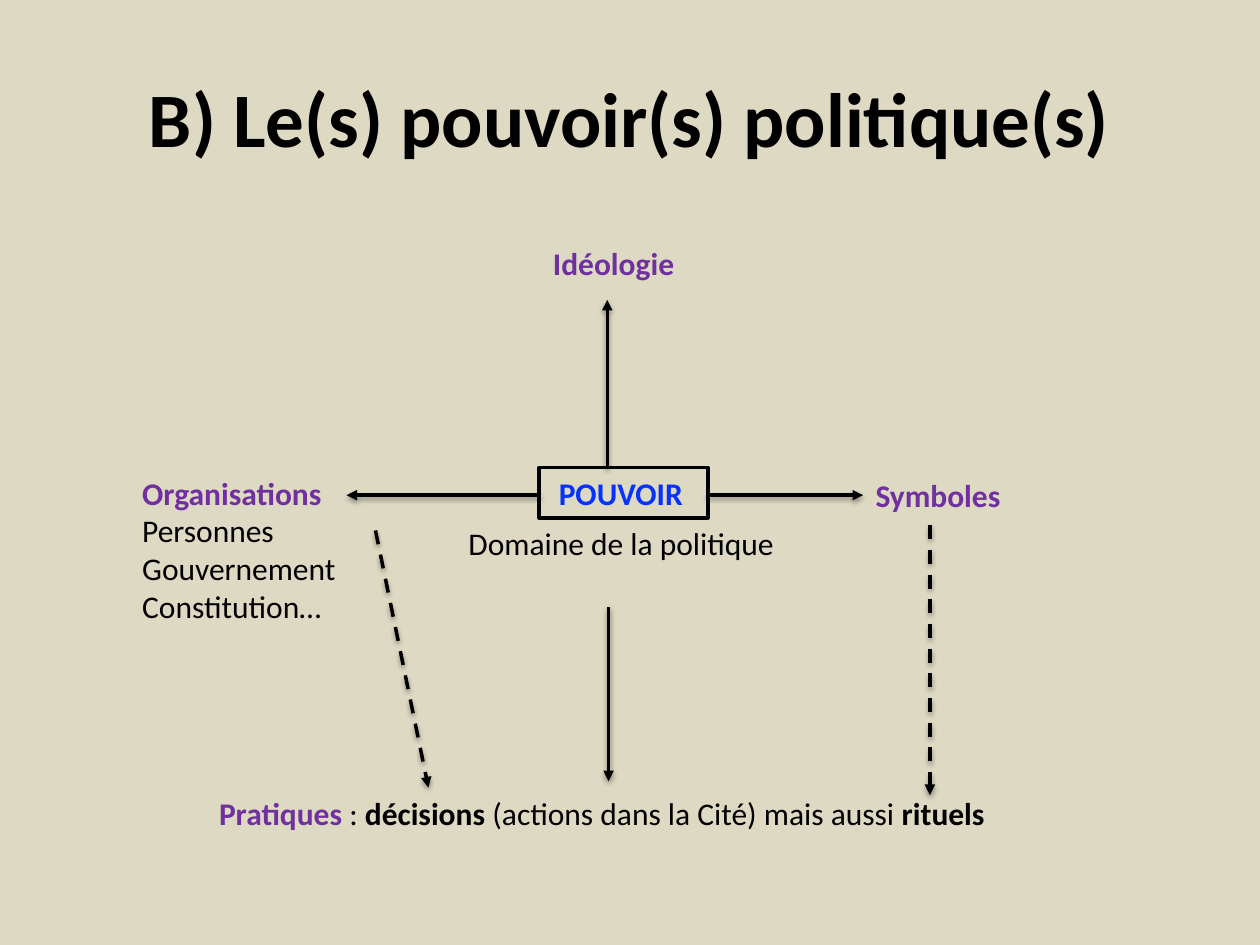
from pptx import Presentation
from pptx.dml.color import RGBColor
from pptx.enum.dml import MSO_LINE_DASH_STYLE as Dash
from pptx.enum.shapes import MSO_CONNECTOR as Connector, MSO_SHAPE as Shape
from pptx.enum.text import MSO_ANCHOR as Anchor, PP_ALIGN as Align
from pptx.oxml import parse_xml
from pptx.oxml.ns import nsdecls
from pptx.util import Inches, Pt

BEIGE = RGBColor(0xDD, 0xD9, 0xC3)
BLACK = RGBColor(0x00, 0x00, 0x00)
BLUE = RGBColor(0x04, 0x32, 0xFF)
PURPLE = RGBColor(0x70, 0x30, 0xA0)

WIDTH, HEIGHT = Inches(10), Inches(7.5)
COLUMNS, ROWS = 100, 75
FONT = "Calibri"
LINE_WIDTH = Pt(2)
LABEL_HEIGHT = 4

SHADOW = (
    f'<a:effectLst {nsdecls("a")}>'
    '<a:outerShdw blurRad="39370" dist="20320" dir="5400000" rotWithShape="0">'
    '<a:srgbClr val="000000"><a:alpha val="38000"/></a:srgbClr>'
    '</a:outerShdw></a:effectLst>'
)
ARROWHEAD = f'<a:tailEnd {nsdecls("a")} type="triangle"/>'


def grid(column, row):
    """Convert a grid position to slide lengths."""
    return round(column * WIDTH / COLUMNS), round(row * HEIGHT / ROWS)


def write(shape, paragraphs, size=18, align=Align.LEFT, anchor=Anchor.TOP):
    """Fill a shape with paragraphs made of (text, colour, bold) runs."""
    frame = shape.text_frame
    frame.word_wrap = True
    frame.vertical_anchor = anchor
    for index, runs in enumerate(paragraphs):
        paragraph = frame.add_paragraph() if index else frame.paragraphs[0]
        paragraph.alignment = align
        for text, colour, bold in runs:
            run = paragraph.add_run()
            run.text = text
            run.font.name = FONT
            run.font.size = Pt(size)
            run.font.bold = bold
            run.font.color.rgb = colour


def add_label(slide, column, row, columns, paragraphs, rows=LABEL_HEIGHT, **style):
    """Add a text box placed on the grid."""
    box = slide.shapes.add_textbox(*grid(column, row), *grid(columns, rows))
    write(box, paragraphs, **style)


def add_frame(slide, column, row, columns, paragraphs):
    """Add an outlined, unfilled rectangle with text."""
    frame = slide.shapes.add_shape(
        Shape.RECTANGLE, *grid(column, row), *grid(columns, LABEL_HEIGHT))
    frame.shadow.inherit = False
    frame.fill.background()
    frame.line.color.rgb = BLACK
    frame.line.width = LINE_WIDTH
    write(frame, paragraphs)


def add_arrow(slide, start, end, dashed=False):
    """Add a shadowed arrow between two grid points."""
    arrow = slide.shapes.add_connector(Connector.STRAIGHT, *grid(*start), *grid(*end))
    arrow.line.color.rgb = BLACK
    arrow.line.width = LINE_WIDTH
    if dashed:
        arrow.line.dash_style = Dash.DASH
    arrow.line._get_or_add_ln().append(parse_xml(ARROWHEAD))
    arrow._element.spPr.append(parse_xml(SHADOW))


def main():
    """Build the slide on political power and save it."""
    presentation = Presentation()
    presentation.slide_width, presentation.slide_height = WIDTH, HEIGHT
    slide = presentation.slides.add_slide(presentation.slide_layouts[6])
    slide.background.fill.solid()
    slide.background.fill.fore_color.rgb = BEIGE

    add_label(slide, 5, 3, 90, [[("B) Le(s) pouvoir(s) politique(s)", BLACK, True)]],
              rows=12.5, size=44, align=Align.CENTER, anchor=Anchor.MIDDLE)

    add_frame(slide, 42.8, 37.1, 13.4, [[(" ", BLACK, True), ("POUVOIR", BLUE, True)]])
    add_label(slide, 36.2, 41.1, 27, [[("Domaine de la politique", BLACK, False)]])
    add_label(slide, 42.9, 18.9, 22.1, [[("Idéologie", PURPLE, True)]])
    add_label(slide, 68.5, 37.3, 22.1, [[("Symboles", PURPLE, True)]])

    members = ["Personnes", "Gouvernement", "Constitution…"]
    add_label(slide, 10.3, 37.1, 22.1,
              [[("Organisations", PURPLE, True)]]
              + [[(member, BLACK, False)] for member in members], rows=13.1)
    add_label(slide, 16.4, 62.5, 63.6, [[
        ("Pratiques", PURPLE, True),
        (" : ", BLACK, False),
        ("décisions", BLACK, True),
        (" (actions dans la Cité) mais aussi ", BLACK, False),
        ("rituels", BLACK, True),
    ]])

    add_arrow(slide, (48.2, 37.1), (48.2, 23.8))
    add_arrow(slide, (56.1, 39.3), (68.5, 39.3))
    add_arrow(slide, (42.9, 39.3), (27.5, 39.3))
    add_arrow(slide, (48.3, 48.2), (48.3, 62))
    add_arrow(slide, (73.8, 41.7), (73.8, 63.1), dashed=True)
    add_arrow(slide, (29.8, 42.1), (34, 62.5), dashed=True)

    presentation.save("out.pptx")


if __name__ == "__main__":
    main()
